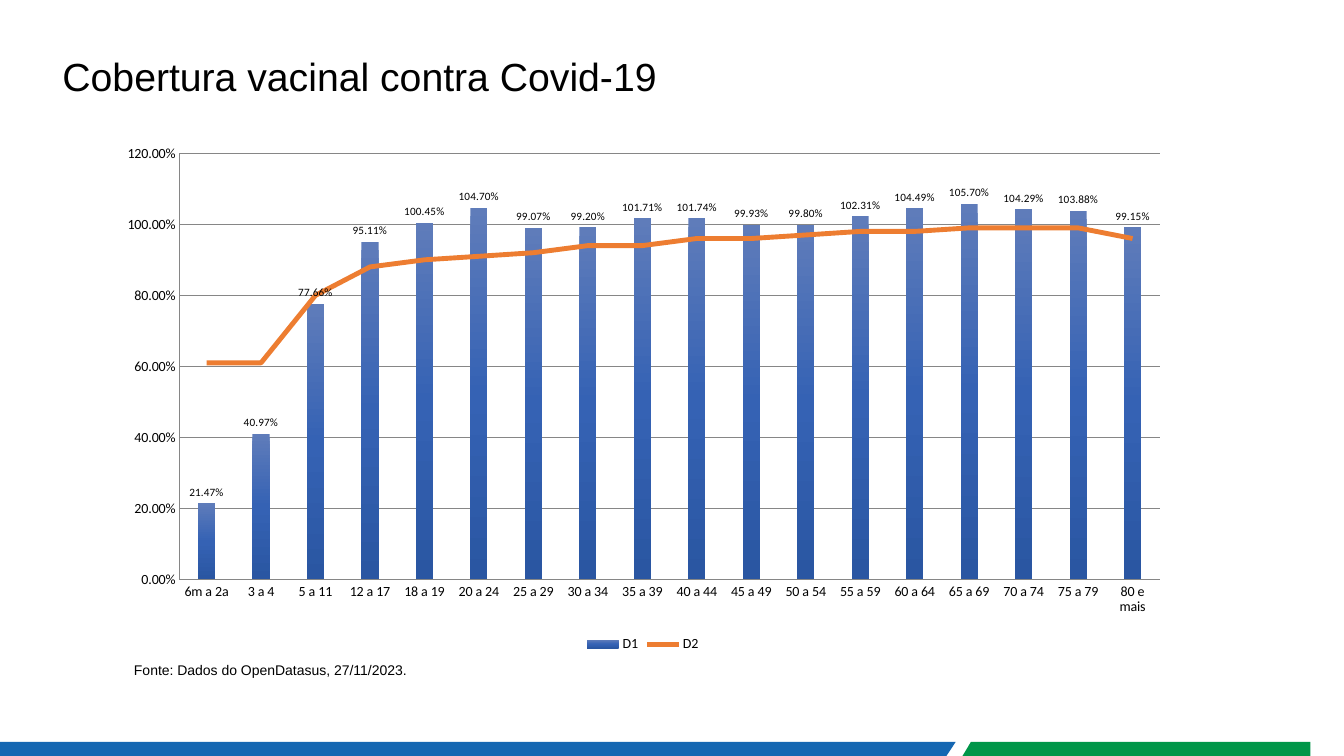
from copy import deepcopy
from typing import NamedTuple

from lxml import etree
from pptx import Presentation
from pptx.chart.data import CategoryChartData
from pptx.dml.color import RGBColor
from pptx.enum.chart import (XL_CHART_TYPE, XL_LABEL_POSITION, XL_LEGEND_POSITION,
                             XL_MARKER_STYLE, XL_TICK_MARK)
from pptx.enum.text import MSO_ANCHOR, PP_ALIGN
from pptx.oxml import parse_xml
from pptx.oxml.ns import qn
from pptx.util import Pt

COLUMNS = XL_CHART_TYPE.COLUMN_CLUSTERED
OUTSIDE_END = XL_LABEL_POSITION.OUTSIDE_END
BOTTOM = XL_LEGEND_POSITION.BOTTOM
NO_MARKER = XL_MARKER_STYLE.NONE
NO_TICK = XL_TICK_MARK.NONE
ANCHOR_TOP, ANCHOR_BOTTOM = MSO_ANCHOR.TOP, MSO_ANCHOR.BOTTOM
LEFT, JUSTIFY = PP_ALIGN.LEFT, PP_ALIGN.JUSTIFY

BLACK = RGBColor(0x00, 0x00, 0x00)
GRAY = RGBColor(0x86, 0x86, 0x86)
BLUE = RGBColor(0x15, 0x67, 0xB2)
GREEN = RGBColor(0x00, 0x96, 0x49)
ORANGE = RGBColor(0xED, 0x7D, 0x31)
BAR_TOP = RGBColor(0x5F, 0x7C, 0xBA)
BAR_MIDDLE = RGBColor(0x35, 0x62, 0xB4)
BAR_BOTTOM = RGBColor(0x2A, 0x56, 0xA2)

PERCENT = "0.00%"
AGES = ["6m a 2a", "3 a 4", "5 a 11", "12 a 17", "18 a 19", "20 a 24",
        "25 a 29", "30 a 34", "35 a 39", "40 a 44", "45 a 49", "50 a 54",
        "55 a 59", "60 a 64", "65 a 69", "70 a 74", "75 a 79", "80 e mais"]
DOSES = {
    "D1": [0.2147, 0.4097, 0.7766, 0.9511, 1.0045, 1.047, 0.9907, 0.992, 1.0171,
           1.0174, 0.9993, 0.998, 1.0231, 1.0449, 1.057, 1.0429, 1.0388, 0.9915],
    "D2": [0.61, 0.61, 0.8, 0.88, 0.9, 0.91, 0.92, 0.94, 0.94,
           0.96, 0.96, 0.97, 0.98, 0.98, 0.99, 0.99, 0.99, 0.96],
}
PLOT_AREA = {"x": 0.07, "y": 0.035, "w": 0.91, "h": 0.818}
CHART_NS = 'xmlns:c="http://schemas.openxmlformats.org/drawingml/2006/chart"'


class Label(NamedTuple):
    text: str
    box: tuple[float, float, float, float]
    size: float
    align: PP_ALIGN
    anchor: MSO_ANCHOR


class Strip(NamedTuple):
    points: list[tuple[float, float]]
    color: RGBColor


LABELS = [
    Label("Cobertura vacinal contra Covid-19", (37.5, 37.5, 901.5, 59), 28,
          LEFT, ANCHOR_TOP),
    Label("Fonte: Dados do OpenDatasus, 27/11/2023.", (88.6, 468.7, 306, 19.4), 10,
          JUSTIFY, ANCHOR_BOTTOM),
]
STRIPS = [
    Strip([(0, 530), (682.6, 530), (676, 540), (0, 540)], BLUE),
    Strip([(693.5, 530), (936, 530), (936, 540), (687.5, 540)], GREEN),
]


def set_all(target, values: dict) -> None:
    for name, value in values.items():
        setattr(target, name, value)


def add_label(s, label: Label) -> None:
    tf = s.shapes.add_textbox(*map(Pt, label.box)).text_frame
    set_all(tf, {"word_wrap": True, "vertical_anchor": label.anchor})
    p = tf.paragraphs[0]
    set_all(p, {"alignment": label.align, "line_spacing": 0.9})
    r = p.add_run()
    r.text = label.text
    set_all(r.font, {"name": "Arial", "size": Pt(label.size)})
    r.font.color.rgb = BLACK


def add_strip(s, strip: Strip) -> None:
    corners = [(Pt(x), Pt(y)) for x, y in strip.points]
    builder = s.shapes.build_freeform(*corners[0])
    builder.add_line_segments(corners[1:], close=True)
    sp = builder.convert_to_shape()
    sp.shadow.inherit = False
    sp.fill.solid()
    sp.fill.fore_color.rgb = strip.color
    sp.line.fill.background()


def move_to_line_plot(chart, series) -> None:
    """Draw a column series as a line on the same axes."""
    ser = series._element
    for child in ser.findall(qn("c:invertIfNegative")):
        ser.remove(child)
    bar_plot = ser.getparent()
    line_plot = parse_xml(
        f'<c:lineChart {CHART_NS}><c:grouping val="standard"/>'
        '<c:varyColors val="0"/><c:marker val="1"/></c:lineChart>')
    line_plot.insert(2, ser)
    for axis_id in bar_plot.findall(qn("c:axId")):
        line_plot.append(deepcopy(axis_id))
    bar_plot.addnext(line_plot)


def set_plot_area(chart) -> None:
    area = chart._chartSpace.find(".//" + qn("c:plotArea"))
    for old in area.findall(qn("c:layout")):
        area.remove(old)
    layout = etree.Element(qn("c:layout"))
    manual = etree.SubElement(layout, qn("c:manualLayout"))
    settings = {"layoutTarget": "inner", "xMode": "edge", "yMode": "edge", **PLOT_AREA}
    for tag, value in settings.items():
        etree.SubElement(manual, qn(f"c:{tag}")).set("val", str(value))
    area.insert(0, layout)


def fill_bars(series) -> None:
    fill = series.format.fill
    fill.gradient()
    fill.gradient_angle = 270
    stops = series._element.find(".//" + qn("a:gsLst"))
    stops.insert(1, deepcopy(stops[0]))
    for stop, position, color in zip(fill.gradient_stops, (0, 0.5, 1),
                                     (BAR_TOP, BAR_MIDDLE, BAR_BOTTOM)):
        stop.position = position
        stop.color.rgb = color


def add_coverage_chart(s) -> None:
    data = CategoryChartData(number_format=PERCENT)
    data.categories = AGES
    for name, values in DOSES.items():
        data.add_series(name, values)
    chart = s.shapes.add_chart(COLUMNS, Pt(74.2), Pt(96.5), Pt(769.7), Pt(372.2),
                               data).chart
    set_all(chart, {"has_title": False, "has_legend": True})
    set_all(chart.font, {"name": "Calibri", "size": Pt(10)})
    chart.font.color.rgb = BLACK
    set_all(chart.legend, {"position": BOTTOM, "include_in_layout": False})
    set_plot_area(chart)

    # Axes
    for axis in (chart.category_axis, chart.value_axis):
        set_all(axis, {"major_tick_mark": NO_TICK, "minor_tick_mark": NO_TICK})
        axis.format.line.color.rgb = GRAY
    value_axis = chart.value_axis
    set_all(value_axis, {"minimum_scale": 0, "maximum_scale": 1.2, "major_unit": 0.2,
                         "has_major_gridlines": True})
    value_axis.major_gridlines.format.line.color.rgb = GRAY
    set_all(value_axis.tick_labels,
            {"number_format": PERCENT, "number_format_is_linked": False})

    # First dose as columns
    bars = chart.plots[0]
    set_all(bars, {"gap_width": 219, "overlap": -27, "vary_by_categories": False})
    first_dose, second_dose = bars.series
    fill_bars(first_dose)
    labels = first_dose.data_labels
    set_all(labels, {"show_value": True, "position": OUTSIDE_END,
                     "number_format": PERCENT, "number_format_is_linked": False})
    set_all(labels.font, {"name": "Calibri", "size": Pt(8)})
    labels.font.color.rgb = BLACK

    # Second dose as a line
    move_to_line_plot(chart, second_dose)
    line = chart.plots[1].series[0]
    line.smooth = False
    line.marker.style = NO_MARKER
    line.format.line.color.rgb = ORANGE
    line.format.line.width = Pt(3.5)


def main() -> None:
    prs = Presentation()
    set_all(prs, {"slide_width": Pt(960), "slide_height": Pt(540)})
    s = prs.slides.add_slide(prs.slide_layouts[6])
    for strip in STRIPS:
        add_strip(s, strip)
    for label in LABELS:
        add_label(s, label)
    add_coverage_chart(s)
    prs.save("out.pptx")


if __name__ == "__main__":
    main()
